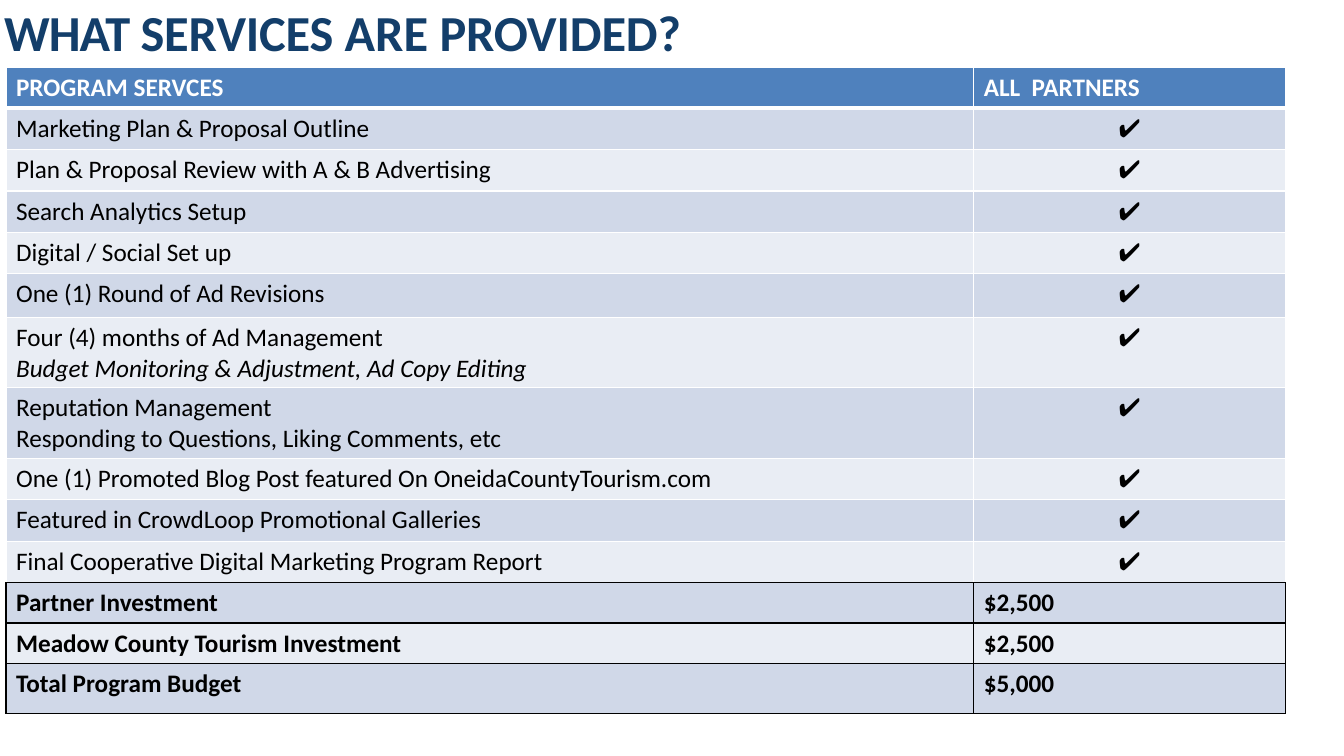
from lxml import etree
from pptx import Presentation
from pptx.dml.color import RGBColor
from pptx.enum.text import MSO_ANCHOR, PP_ALIGN
from pptx.oxml.ns import qn
from pptx.util import Pt

NAVY = RGBColor(0x13, 0x3E, 0x6A)
BLUE = RGBColor(0x4F, 0x81, 0xBD)
BAND_DARK = RGBColor(0xD0, 0xD8, 0xE8)
BAND_LIGHT = RGBColor(0xE9, 0xED, 0xF4)
WHITE = RGBColor(0xFF, 0xFF, 0xFF)
BLACK = RGBColor(0, 0, 0)

CHECK = "✔️"
COLUMN_WIDTHS = (691.2, 222.6)
LINE_HEIGHT = 29.6
HEADER = ("PROGRAM SERVCES", "ALL  PARTNERS")
# Each service: its lines of text, whether the last is italic, row height
SERVICES = [
    (["Marketing Plan & Proposal Outline"], False, LINE_HEIGHT),
    (["Plan & Proposal Review with A & B Advertising"], False, LINE_HEIGHT),
    (["Search Analytics Setup"], False, LINE_HEIGHT),
    (["Digital / Social Set up"], False, LINE_HEIGHT),
    (["One (1) Round of Ad Revisions"], False, 31),
    (["Four (4) months of Ad Management",
      "Budget Monitoring & Adjustment, Ad Copy Editing"], True, 48.2),
    (["Reputation Management",
      "Responding to Questions, Liking Comments, etc"], False, 48.2),
    (["One (1) Promoted Blog Post featured On OneidaCountyTourism.com"], False, LINE_HEIGHT),
    (["Featured in CrowdLoop Promotional Galleries"], False, LINE_HEIGHT),
    (["Final Cooperative Digital Marketing Program Report"], False, LINE_HEIGHT),
]
BUDGET = [
    ("Partner Investment", "$2,500", 28.6),
    ("Meadow County Tourism Investment", "$2,500", 28.6),
    ("Total Program Budget", "$5,000", 35.5),
]


def add_run(paragraph, text, size=18, color=BLACK, bold=False, italic=False, spacing=0):
    run = paragraph.add_run()
    run.text = text
    font = run.font
    font.name, font.size, font.bold, font.italic = "Calibri", Pt(size), bold, italic
    font.color.rgb = color
    if spacing:
        run._r.get_or_add_rPr().set("spc", str(round(spacing * 100)))


def set_borders(cell, color, bottom_color, bottom_width):
    properties = cell._tc.get_or_add_tcPr()
    for side in ("L", "R", "T", "B"):
        is_bottom = side == "B"
        width = bottom_width if is_bottom else 1
        line = etree.SubElement(properties, qn(f"a:ln{side}"), w=str(Pt(width)))
        fill = etree.SubElement(line, qn("a:solidFill"))
        etree.SubElement(fill, qn("a:srgbClr"), val=str(bottom_color if is_bottom else color))


def fill_cell(cell, lines, fill, align=PP_ALIGN.LEFT, border=WHITE,
              bottom_color=None, bottom_width=1, last_italic=False, **text_format):
    set_borders(cell, border, bottom_color or border, bottom_width)
    cell.fill.solid()
    cell.fill.fore_color.rgb = fill
    cell.vertical_anchor = MSO_ANCHOR.TOP
    frame = cell.text_frame
    for index, line in enumerate(lines):
        paragraph = frame.add_paragraph() if index else frame.paragraphs[0]
        paragraph.alignment = align
        italic = last_italic and index == len(lines) - 1
        add_run(paragraph, line, italic=italic, **text_format)


def add_title(slide, left, top, width, height):
    box = slide.shapes.add_textbox(Pt(left), Pt(top), Pt(width), Pt(height))
    frame = box.text_frame
    frame.word_wrap = True
    frame.margin_left = frame.margin_right = frame.margin_bottom = 0
    frame.margin_top = Pt(1)
    paragraph = frame.paragraphs[0]
    paragraph.alignment = PP_ALIGN.LEFT
    words = [("WHAT ", -0.7), ("SERVICES ", -0.1), ("ARE ", 0), ("PROVIDED?", -0.1)]
    for word, spacing in words:
        add_run(paragraph, word, size=36, color=NAVY, bold=True, spacing=spacing)


def add_services_table(slide, left, top):
    heights = [28.8] + [row[-1] for row in SERVICES + BUDGET]
    table = slide.shapes.add_table(
        len(heights), len(COLUMN_WIDTHS), Pt(left), Pt(top),
        Pt(sum(COLUMN_WIDTHS)), Pt(sum(heights))).table
    table.first_row = table.horz_banding = False
    for column, width in zip(table.columns, COLUMN_WIDTHS):
        column.width = Pt(width)
    for row, height in zip(table.rows, heights):
        row.height = Pt(height)

    for column, heading in enumerate(HEADER):
        fill_cell(table.cell(0, column), [heading], BLUE, bottom_width=3,
                  color=WHITE, bold=True)

    bands = (BAND_LIGHT, BAND_DARK)
    for row, (lines, last_italic, _) in enumerate(SERVICES, start=1):
        bottom = BLACK if row == len(SERVICES) else WHITE
        fill = bands[row % 2]
        fill_cell(table.cell(row, 0), lines, fill, bottom_color=bottom,
                  last_italic=last_italic)
        fill_cell(table.cell(row, 1), [CHECK], fill, PP_ALIGN.CENTER, bottom_color=bottom)

    for row, (label, amount, _) in enumerate(BUDGET, start=len(SERVICES) + 1):
        for column, text in enumerate((label, amount)):
            fill_cell(table.cell(row, column), [text], bands[row % 2],
                      border=BLACK, bold=True)


def main():
    presentation = Presentation()
    presentation.slide_width, presentation.slide_height = Pt(960), Pt(540)
    slide = presentation.slides.add_slide(presentation.slide_layouts[6])
    add_title(slide, left=3, top=0, width=490, height=45)
    add_services_table(slide, left=4.3, top=48.4)
    presentation.save("out.pptx")


if __name__ == "__main__":
    main()
